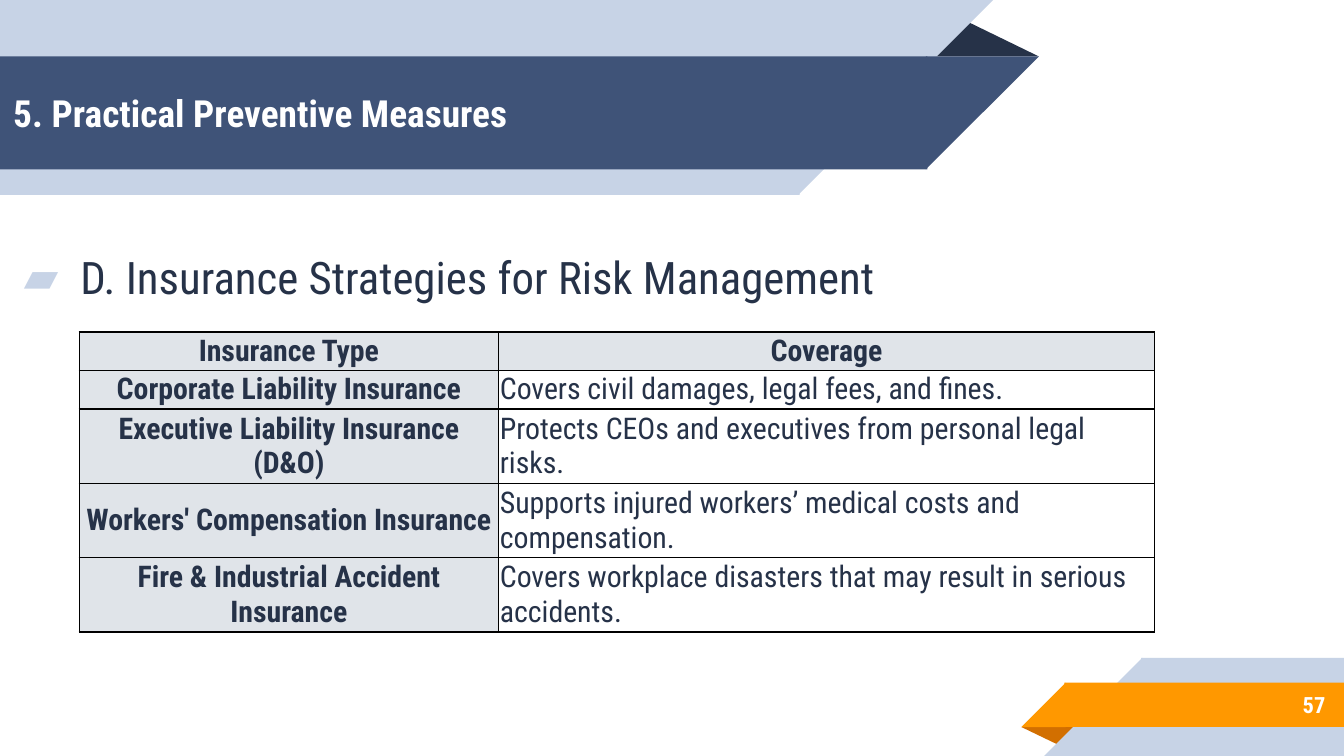
import pptx
import pptx.dml.color
import pptx.enum.shapes
import pptx.enum.text
import pptx.oxml
import pptx.oxml.ns
import pptx.util
from lxml import etree

Inches = pptx.util.Inches
Pt = pptx.util.Pt
SHAPE = pptx.enum.shapes.MSO_SHAPE
ALIGN = pptx.enum.text.PP_ALIGN
MIDDLE = pptx.enum.text.MSO_ANCHOR.MIDDLE
qn = pptx.oxml.ns.qn

FONT = "Roboto Condensed"
WIDTH = 10
HEIGHT = WIDTH * 9 / 16
OVERLAP = 0.01  # hides the seam between the two parts of a ribbon
COLORS = {
    "pale": "C7D3E6", "navy": "3F5378", "ink": "263248", "orange": "FF9800",
    "rust": "D26F00", "gray": "E0E4E9", "white": "FFFFFF", "black": "000000",
}
INSURANCE_ROWS = [
    ("Insurance Type", "Coverage"),
    ("Corporate Liability Insurance", "Covers civil damages, legal fees, and fines."),
    ("Executive Liability Insurance (D&O)",
     "Protects CEOs and executives from personal legal risks."),
    ("Workers' Compensation Insurance",
     "Supports injured workers’ medical costs and compensation."),
    ("Fire & Industrial Accident Insurance",
     "Covers workplace disasters that may result in serious accidents."),
]


def rgb(name):
    return pptx.dml.color.RGBColor.from_string(COLORS[name])


def add_block(slide, kind, box, color, flip=None):
    shape = slide.shapes.add_shape(kind, *map(Inches, box))
    shape.shadow.inherit = False
    shape.fill.solid()
    shape.fill.fore_color.rgb = rgb(color)
    shape.line.fill.background()
    if flip:
        shape._element.spPr.find(qn("a:xfrm")).set(flip, "1")
    return shape


def add_fold(slide, box, color, rotation=0):
    fold = add_block(slide, SHAPE.ISOSCELES_TRIANGLE, box, color)
    fold.adjustments[0] = 0.324
    fold.rotation = rotation


def add_left_ribbon(slide, top, length, height, color):
    """Band from the left edge whose right end slants at 45 degrees."""
    add_block(slide, SHAPE.RECTANGLE, (0, top, length + OVERLAP, height), color)
    add_block(slide, SHAPE.RIGHT_TRIANGLE, (length, top, height, height), color, "flipV")


def add_right_ribbon(slide, left, top, height, color):
    """Band to the right edge whose left end slants at 45 degrees."""
    start = left + height - OVERLAP
    add_block(slide, SHAPE.RECTANGLE, (start, top, WIDTH - start, height), color)
    add_block(slide, SHAPE.RIGHT_TRIANGLE, (left, top, height, height), color, "flipH")


def style_paragraph(paragraph, size, color, bold=False, align=ALIGN.LEFT):
    paragraph.alignment = align
    font = paragraph.font
    font.name, font.size, font.bold = FONT, Pt(size), bold
    font.color.rgb = rgb(color)


def add_text(slide, box, text):
    frame = slide.shapes.add_textbox(*map(Inches, box)).text_frame
    frame.word_wrap = True
    frame.vertical_anchor = MIDDLE
    frame.margin_left = frame.margin_right = Inches(0.1)
    frame.margin_top = frame.margin_bottom = Inches(0.1)
    frame.text = text
    return frame.paragraphs[0]


def add_header(slide, top, height, title):
    add_fold(slide, (6.88, top - 0.28, 0.85, 0.28), "ink")
    add_left_ribbon(slide, 0, 5.94, 1.45, "pale")
    add_left_ribbon(slide, top, 6.89, height, "navy")
    paragraph = add_text(slide, (0, top, 7.28, height), title)
    style_paragraph(paragraph, 20, "white", bold=True)


def add_footer(slide, left, top, height, number):
    add_fold(slide, (left, top + height, 0.43, 0.14), "rust", 180)
    add_right_ribbon(slide, left + 0.17, HEIGHT - 0.73, 0.73, "pale")
    add_right_ribbon(slide, left, top, height, "orange")
    paragraph = add_text(slide, (8.33, top - 0.01, 1.63, 0.35), number)
    style_paragraph(paragraph, 12, "white", bold=True, align=ALIGN.RIGHT)


def add_bullet_heading(slide, box, text):
    paragraph = add_text(slide, box, text)
    properties = paragraph._p.get_or_add_pPr()
    properties.set("marL", str(Inches(0.5)))
    properties.set("indent", str(Inches(-0.42)))
    bullet_color = etree.SubElement(properties, qn("a:buClr"))
    etree.SubElement(bullet_color, qn("a:srgbClr"), val=COLORS["pale"])
    etree.SubElement(properties, qn("a:buFont"), typeface=FONT)
    etree.SubElement(properties, qn("a:buChar"), char="▰")
    style_paragraph(paragraph, 24, "ink")


def add_cell_borders(cell):
    properties = cell._tc.get_or_add_tcPr()
    for side in ("a:lnL", "a:lnR", "a:lnT", "a:lnB"):
        line = etree.SubElement(properties, qn(side), w=str(Pt(0.75)))
        fill = etree.SubElement(line, qn("a:solidFill"))
        etree.SubElement(fill, qn("a:srgbClr"), val=COLORS["black"])


def add_insurance_table(slide, left, top, rows):
    column_widths = (3.12, 4.88)
    row_heights = (0.25, 0.25, 0.49, 0.49, 0.49)
    table = slide.shapes.add_table(
        len(rows), len(column_widths), Inches(left), Inches(top),
        Inches(sum(column_widths)), Inches(sum(row_heights))).table
    for column, width in zip(table.columns, column_widths):
        column.width = Inches(width)
    for row, height in zip(table.rows, row_heights):
        row.height = Inches(height)
    for row_index, texts in enumerate(rows):
        for column_index, text in enumerate(texts):
            is_label = row_index == 0 or column_index == 0
            cell = table.cell(row_index, column_index)
            cell.text = text
            cell.vertical_anchor = MIDDLE
            cell.margin_left = cell.margin_right = Inches(0.01)
            cell.margin_top = cell.margin_bottom = Inches(0.01)
            add_cell_borders(cell)
            if is_label:
                cell.fill.solid()
                cell.fill.fore_color.rgb = rgb("gray")
            else:
                cell.fill.background()
            style_paragraph(cell.text_frame.paragraphs[0], 16, "ink", is_label,
                            ALIGN.CENTER if is_label else ALIGN.LEFT)


def main():
    presentation = pptx.Presentation()
    presentation.slide_width = Inches(WIDTH)
    presentation.slide_height = Inches(HEIGHT)
    slide = presentation.slides.add_slide(presentation.slide_layouts[6])

    # Ribbons with the page number and the title
    add_footer(slide, 7.6, 5.08, 0.33, "57")
    add_header(slide, 0.42, 0.84, "5. Practical Preventive Measures")

    # Content
    add_bullet_heading(slide, (0, 1.71, WIDTH, 0.7),
                       "D. Insurance Strategies for Risk Management")
    add_insurance_table(slide, 0.59, 2.47, INSURANCE_ROWS)

    presentation.save("out.pptx")


if __name__ == "__main__":
    main()
